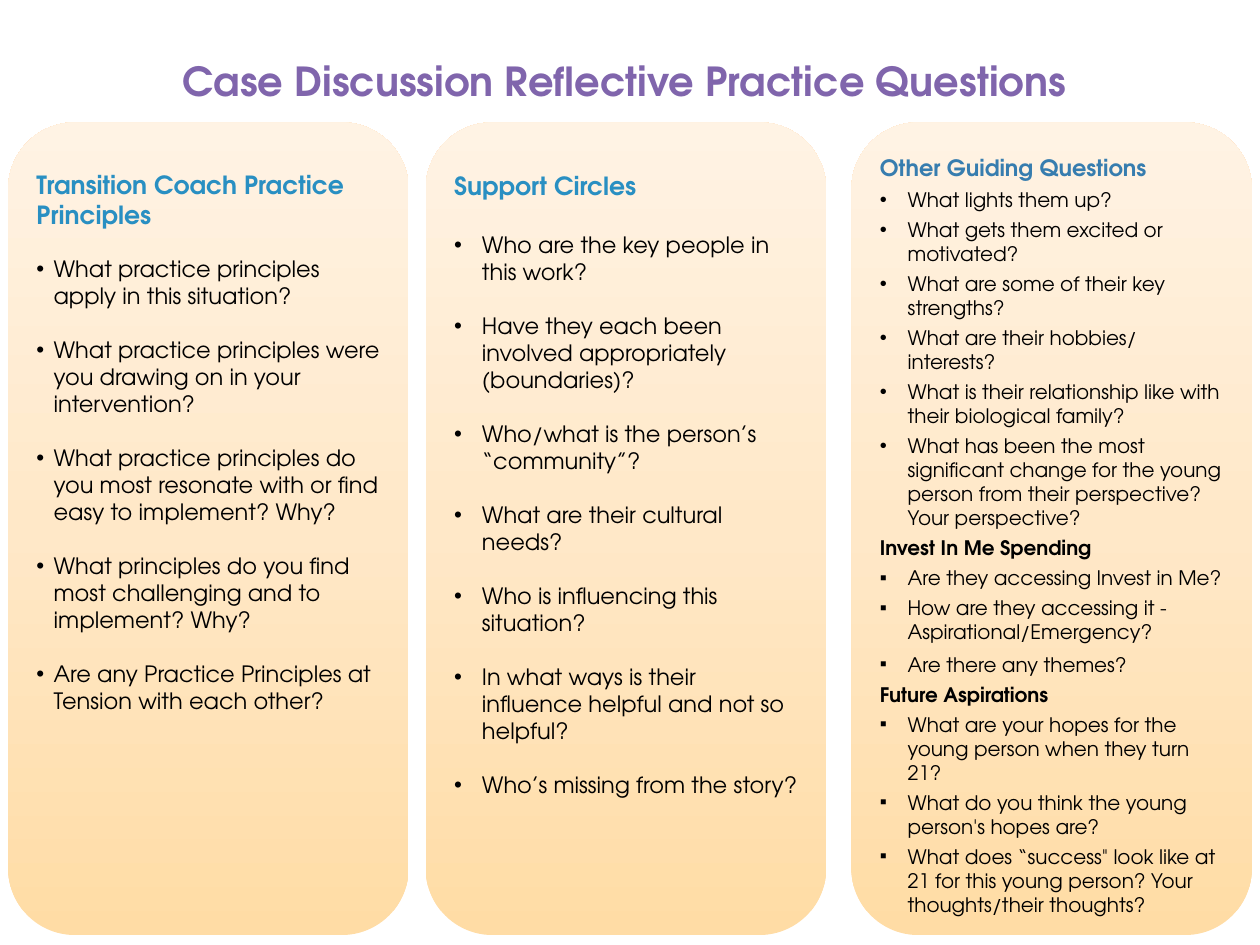
"""Build the three-panel slide of reflective practice questions."""
from copy import deepcopy

from lxml.etree import SubElement
from pptx import Presentation
from pptx.dml.color import RGBColor
from pptx.enum.shapes import MSO_SHAPE
from pptx.enum.text import MSO_ANCHOR, PP_ALIGN
from pptx.oxml.ns import qn
from pptx.util import Inches, Pt

COLORS = {
    "title": "8065AC",
    "heading": "298FC2",
    "guiding": "377DAF",
    "text": "000000",
    "panel_bottom": "FFDCA5",
    "panel_middle": "FFE8C8",
    "panel_top": "FFF3E4",
}
FONT = "TeX Gyre Adventor"


def style(paragraph, text, size, color, bold=False, before=0):
    paragraph.text = text
    paragraph.alignment = PP_ALIGN.LEFT
    paragraph.space_before = Pt(before)
    paragraph.font.name = FONT
    paragraph.font.size = Pt(size)
    paragraph.font.bold = bold
    paragraph.font.color.rgb = RGBColor.from_string(COLORS[color])


def add_bullet(paragraph, character, indent):
    properties = paragraph._p.get_or_add_pPr()
    properties.set("marL", str(Inches(indent)))
    properties.set("indent", str(-Inches(indent)))
    SubElement(properties, qn("a:buFont")).set("typeface", "Arial")
    SubElement(properties, qn("a:buChar")).set("char", character)


principles = [
    "What practice principles apply in this situation?",
    "What practice principles were you drawing on in your intervention?",
    "What practice principles do you most resonate with or find easy to implement? Why?",
    "What principles do you find most challenging and to implement? Why?",
    "Are any Practice Principles at Tension with each other?",
]
circles = [
    "Who are the key people in this work?",
    "Have they each been involved appropriately (boundaries)?",
    "Who/what is the person’s “community”?",
    "What are their cultural needs?",
    "Who is influencing this situation?",
    "In what ways is their influence helpful and not so helpful?",
    "Who’s missing from the story?",
]
guiding = [
    "What lights them up?",
    "What gets them excited or motivated?",
    "What are some of their key strengths?",
    "What are their hobbies/ interests?",
    "What is their relationship like with their biological family?",
    "What has been the most significant change for the young person from their "
    "perspective? Your perspective?",
]
spending = [
    "Are they accessing Invest in Me?",
    "How are they accessing it - Aspirational/Emergency?",
    "Are there any themes?",
]
aspirations = [
    "What are your hopes for the young person when they turn 21?",
    "What do you think the young person's hopes are?",
    "What does “success\" look like at 21 for this young person? Your thoughts/their thoughts?",
]

panels = [
    {"left": 0.09, "margin": 0.31, "indent": 0.19, "size": 18, "first_gap": 20, "gap": 21.6,
     "sections": [("Transition Coach Practice Principles", 20, "heading", "•", principles)]},
    {"left": 4.73, "margin": 0.32, "indent": 0.31, "size": 18, "first_gap": 24, "gap": 21.6,
     "sections": [("Support Circles", 20, "heading", "•", circles)]},
    {"left": 9.46, "margin": 0.14, "indent": 0.31, "size": 16, "first_gap": 4.8, "gap": 4.8,
     "sections": [("Other Guiding Questions", 18, "guiding", "•", guiding),
                  ("Invest In Me Spending", 16, "text", "▪", spending),
                  ("Future Aspirations", 16, "text", "▪", aspirations)]},
]

presentation = Presentation()
presentation.slide_width = Inches(14)
presentation.slide_height = Inches(10.5)
slide = presentation.slides.add_slide(presentation.slide_layouts[6])

title = slide.shapes.add_textbox(Inches(1.93), Inches(0.31), Inches(12.07), Inches(1.24))
title.text_frame.word_wrap = True
title.text_frame.vertical_anchor = MSO_ANCHOR.MIDDLE
style(title.text_frame.paragraphs[0], "Case Discussion Reflective Practice Questions",
      32, "title", bold=True)
title.text_frame.paragraphs[0].line_spacing = 0.9

for panel in panels:
    shape = slide.shapes.add_shape(MSO_SHAPE.ROUNDED_RECTANGLE, Inches(panel["left"]),
                                   Inches(1.36), Inches(4.45), Inches(9.03))
    shape.shadow.inherit = False
    shape.line.fill.background()
    shape.fill.gradient()
    shape.fill.gradient_angle = 90
    first_stop = shape.element.spPr.xpath(".//a:gs")[0]
    first_stop.addnext(deepcopy(first_stop))
    stop_colors = ("panel_bottom", "panel_middle", "panel_top")
    for index, (stop, color) in enumerate(zip(shape.fill.gradient_stops, stop_colors)):
        stop.position = index / 2
        stop.color.rgb = RGBColor.from_string(COLORS[color])

    frame = shape.text_frame
    frame.word_wrap = True
    frame.vertical_anchor = MSO_ANCHOR.TOP
    frame.margin_top = Inches(panel["margin"])
    paragraph = frame.paragraphs[0]
    for section, (heading, size, color, character, questions) in enumerate(panel["sections"]):
        if section:
            paragraph = frame.add_paragraph()
        style(paragraph, heading, size, color, bold=True, before=panel["gap"] if section else 0)
        for index, question in enumerate(questions):
            gap = panel["gap"] if index else panel["first_gap"]
            if question == "Are there any themes?":
                gap = 7.2
            paragraph = frame.add_paragraph()
            style(paragraph, question, panel["size"], "text", before=gap)
            add_bullet(paragraph, character, panel["indent"])

presentation.save("out.pptx")
